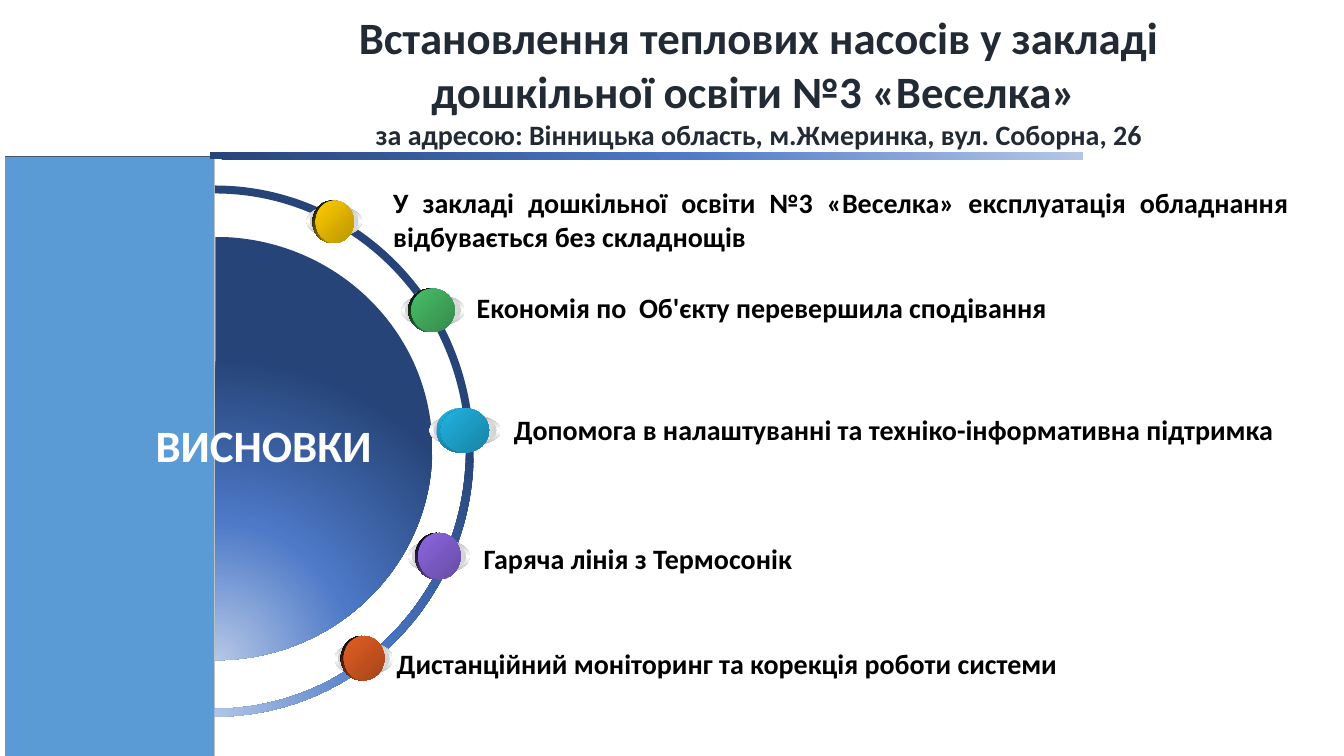
import lxml.etree
import pptx
import pptx.dml.color
import pptx.enum.dml
import pptx.enum.shapes
import pptx.enum.text
import pptx.oxml
import pptx.oxml.ns
import pptx.util

Pt = pptx.util.Pt
RGB = pptx.dml.color.RGBColor
qn = pptx.oxml.ns.qn
SHAPE = pptx.enum.shapes.MSO_SHAPE
ALIGN = pptx.enum.text.PP_ALIGN
ANCHOR = pptx.enum.text.MSO_ANCHOR
AUTO = pptx.enum.text.MSO_AUTO_SIZE

BLACK = RGB(0x00, 0x00, 0x00)
WHITE = RGB(0xFF, 0xFF, 0xFF)
INK = RGB(0x22, 0x2A, 0x35)
SKY = RGB(0x5B, 0x9B, 0xD5)
SLATE = RGB(0x44, 0x54, 0x6A)
PALE = RGB(0xB4, 0xC7, 0xE7)
MID = RGB(0x4D, 0x79, 0xC7)
NAVY = RGB(0x26, 0x44, 0x78)
LINK = RGB(0x05, 0x63, 0xC1)
LINK_DARK = RGB(0x04, 0x4C, 0x94)
SILVER = RGB(0xB6, 0xB6, 0xB6)
SILVER_LIGHT = RGB(0xD1, 0xD1, 0xD1)

TITLE = [
    ("Встановлення теплових насосів у закладі дошкільної освіти №3 «Веселка» ", 32),
    ("за адресою: Вінницька область, м.Жмеринка, вул. Соборна, 26", 20),
]
TITLE_BOX = (173.5, 20.9, 737.3, 73.4)
HUB = [("ВИСНОВКИ", 32)]
HUB_BOX = (91.9, 295, 193, 46.1)
PANEL = (3.6, 111.6, 149.5, 428.4)
BAR = (149.8, 108.7, 623.5, 5)

CONCLUSIONS = [
    ("У закладі дошкільної освіти №3 «Веселка» експлуатація обладнання "
     "відбувається без складнощів", (273.8, 129.2, 653.8, 55.4), ALIGN.JUSTIFY),
    ("Економія по  Об'єкту перевершила сподівання",
     (333.4, 203.8, 498.2, 31.7), ALIGN.LEFT),
    ("Допомога в налаштуванні та техніко-інформативна підтримка",
     (360, 291.3, 578.9, 31.7), ALIGN.LEFT),
    ("Гаряча лінія з Термосонік", (338.4, 383.5, 495.4, 31.7), ALIGN.LEFT),
    ("Дистанційний моніторинг та корекція роботи системи",
     (276.3, 458.6, 523.4, 31.7), ALIGN.LEFT),
]

RING = {"frame": (-39.6, 134.6, 380.2, 375.8), "center": (153.4, 322.2),
        "outer": (185, 189.7), "inner": (179.3, 184)}
DISC = {"frame": (2.9, 165.6, 302.4, 309.6), "center": (153.8, 320.4),
        "outer": (155, 151.2), "inner": None}
BEZIER = 0.5523

ORBS = [
    {"halo": (218.9, 146.9, 39.6, 22.3), "ball": (223.2, 143.3, 27.4, 30.2), "shift": 2.2,
     "rim": (BLACK, RGB(0xFF, 0xCC, 0x00), 45),
     "face": (RGB(0xFF, 0xCC, 0x00), RGB(0xBA, 0x95, 0x00))},
    {"halo": (286.6, 210.2, 45.4, 23), "ball": (291.6, 206.1, 31, 31), "shift": 2.2,
     "rim": (BLACK, RGB(0x48, 0xBE, 0x67), 45),
     "face": (RGB(0x48, 0xBE, 0x67), RGB(0x35, 0x8B, 0x4B))},
    {"halo": (306.7, 295.9, 51.1, 23), "ball": (311.8, 291.6, 34.6, 31.7), "shift": 2.9,
     "rim": (RGB(0x21, 0xB3, 0xE1), RGB(0x18, 0x80, 0xA1), 90),
     "face": (RGB(0x21, 0xB3, 0xE1), RGB(0x18, 0x83, 0xA4))},
    {"halo": (291.6, 385.2, 43.9, 24.5), "ball": (296.6, 380.7, 30.2, 33.1), "shift": 2.2,
     "rim": (BLACK, RGB(0x8D, 0x67, 0xE1), 45),
     "face": (RGB(0x8D, 0x67, 0xE1), RGB(0x67, 0x4B, 0xA4))},
    {"halo": (239, 458.6, 41.8, 23.8), "ball": (243.4, 454.3, 29, 31.7), "shift": 2.2,
     "rim": (BLACK, RGB(0xE3, 0x5E, 0x23), 45),
     "face": (RGB(0xE3, 0x5E, 0x23), RGB(0xA6, 0x45, 0x1A))},
]

BLUES = [(0, PALE), (46, MID), (100, NAVY)]


def points(box):
    return [Pt(v) for v in box]


def plain(sp):
    sp.shadow.inherit = False
    sp.line.fill.background()
    return sp


def gradient(sp, stops, angle=0, focus=None):
    sp.fill.gradient()
    grad = sp.element.spPr.find(qn("a:gradFill"))
    for child in list(grad):
        grad.remove(child)
    grad.set("rotWithShape", "0" if sp.rotation else "1")
    stop_list = lxml.etree.SubElement(grad, qn("a:gsLst"))
    for pos, color in stops:
        stop = lxml.etree.SubElement(stop_list, qn("a:gs"), pos=str(pos * 1000))
        lxml.etree.SubElement(stop, qn("a:srgbClr"), val=str(color))
    if focus:
        circle = lxml.etree.SubElement(grad, qn("a:path"), path="circle")
        edges = {side: str(v * 1000) for side, v in zip("ltrb", focus)}
        lxml.etree.SubElement(circle, qn("a:fillToRect"), **edges)
    else:
        lxml.etree.SubElement(grad, qn("a:lin"), ang=str(angle * 60000), scaled="1")


def add_text(slide, lines, box, color=BLACK, align=ALIGN.LEFT, anchor=ANCHOR.TOP,
             auto_size=AUTO.SHAPE_TO_FIT_TEXT, outline=None):
    tf = slide.shapes.add_textbox(*points(box)).text_frame
    tf.word_wrap = True
    tf.auto_size = auto_size
    tf.vertical_anchor = anchor
    p = tf.paragraphs[0]
    p.alignment = align
    for i, (text, size) in enumerate(lines):
        if i:
            p.add_line_break()
        r = p.add_run()
        r.text = text
        r.font.name = "Calibri"
        r.font.size = Pt(size)
        r.font.bold = True
        r.font.color.rgb = color
        if outline:
            ln = pptx.oxml.parse_xml(
                '<a:ln xmlns:a="http://schemas.openxmlformats.org/drawingml/2006/main" '
                f'w="{Pt(0.75)}"><a:solidFill><a:srgbClr val="{outline}"/></a:solidFill></a:ln>')
            r.font._element.insert(0, ln)


def half_arc(cx, cy, rx, ry):
    kx, ky = BEZIER * rx, BEZIER * ry
    return [(cx, cy - ry), (cx + kx, cy - ry), (cx + rx, cy - ky), (cx + rx, cy),
            (cx + rx, cy + ky), (cx + kx, cy + ry), (cx, cy + ry)]


def add_half_ring(slide, frame, center, outer, inner):
    x, y, w, h = frame
    mid_x, mid_y = x + w / 2, y + h / 2
    arc = half_arc(*center, *outer)
    steps = [("moveTo", arc[:1]), ("cubicBezTo", arc[1:4]), ("cubicBezTo", arc[4:])]
    if inner:
        back = half_arc(*center, *inner)[::-1]
        steps += [("lnTo", back[:1]), ("cubicBezTo", back[1:4]), ("cubicBezTo", back[4:])]
    far_side = [(mid_x - h / 2, mid_y)]
    steps += [("close", []), ("moveTo", far_side), ("lnTo", far_side), ("close", [])]

    fb = slide.shapes.build_freeform(Pt(x), Pt(y))
    fb.add_line_segments([(Pt(x + w), Pt(y)), (Pt(x + w), Pt(y + h)), (Pt(x), Pt(y + h))])
    sp = plain(fb.convert_to_shape())
    sp.rotation = 90
    outline = next(sp.element.iter(qn("a:pathLst")))[0]
    for child in list(outline):
        outline.remove(child)
    for name, pts in steps:
        step = lxml.etree.SubElement(outline, qn("a:" + name))
        for px, py in pts:
            lxml.etree.SubElement(step, qn("a:pt"), x=str(Pt(w / 2 + py - mid_y)),
                                  y=str(Pt(h / 2 - px + mid_x)))
    gradient(sp, BLUES, focus=(50, 130, 50, -30))


def add_orb(slide, halo, ball, shift, rim, face):
    x, y, w, h = halo
    inset_x, inset_y = 0.055 * w, 0.06 * h
    core = (x + inset_x, y + inset_y, w - 2 * inset_x, h - 2 * inset_y)
    front = (ball[0] + shift, *ball[1:])
    layers = [
        (halo, [(0, SILVER), (50, WHITE), (100, SILVER)], 90),
        (core, [(0, SILVER_LIGHT), (50, WHITE), (100, SILVER_LIGHT)], 0),
        (ball, [(0, WHITE), (50, LINK), (100, WHITE)], 45),
        (ball, [(0, rim[0]), (100, rim[1])], rim[2]),
        (front, [(0, LINK_DARK), (50, LINK), (100, LINK_DARK)], 315),
        (front, [(0, face[0]), (100, face[1])], 45),
    ]
    group = slide.shapes.add_group_shape()
    for box, stops, angle in layers:
        sp = plain(group.shapes.add_shape(SHAPE.OVAL, *points(box)))
        gradient(sp, stops, angle)


def main():
    prs = pptx.Presentation()
    prs.slide_width, prs.slide_height = Pt(960), Pt(540)
    s = prs.slides.add_slide(prs.slide_layouts[6])

    panel = plain(s.shapes.add_shape(SHAPE.RECTANGLE, *points(PANEL)))
    panel.fill.patterned()
    panel.fill.pattern = pptx.enum.dml.MSO_PATTERN.DARK_HORIZONTAL
    panel.fill.fore_color.rgb = SKY
    panel.fill.back_color.rgb = SLATE
    bar = plain(s.shapes.add_shape(SHAPE.RECTANGLE, *points(BAR)))
    gradient(bar, BLUES, focus=(100, 0, 0, 100))

    for text, box, align in CONCLUSIONS:
        add_text(s, [(text, 20)], box, align=align)
    for half_ring in (RING, DISC):
        add_half_ring(s, **half_ring)
    for orb in ORBS:
        add_orb(s, **orb)
    add_text(s, TITLE, TITLE_BOX, color=INK, align=ALIGN.CENTER, anchor=ANCHOR.MIDDLE,
             auto_size=AUTO.NONE, outline=INK)
    add_text(s, HUB, HUB_BOX, color=WHITE, align=ALIGN.CENTER)
    prs.save("out.pptx")


if __name__ == "__main__":
    main()
